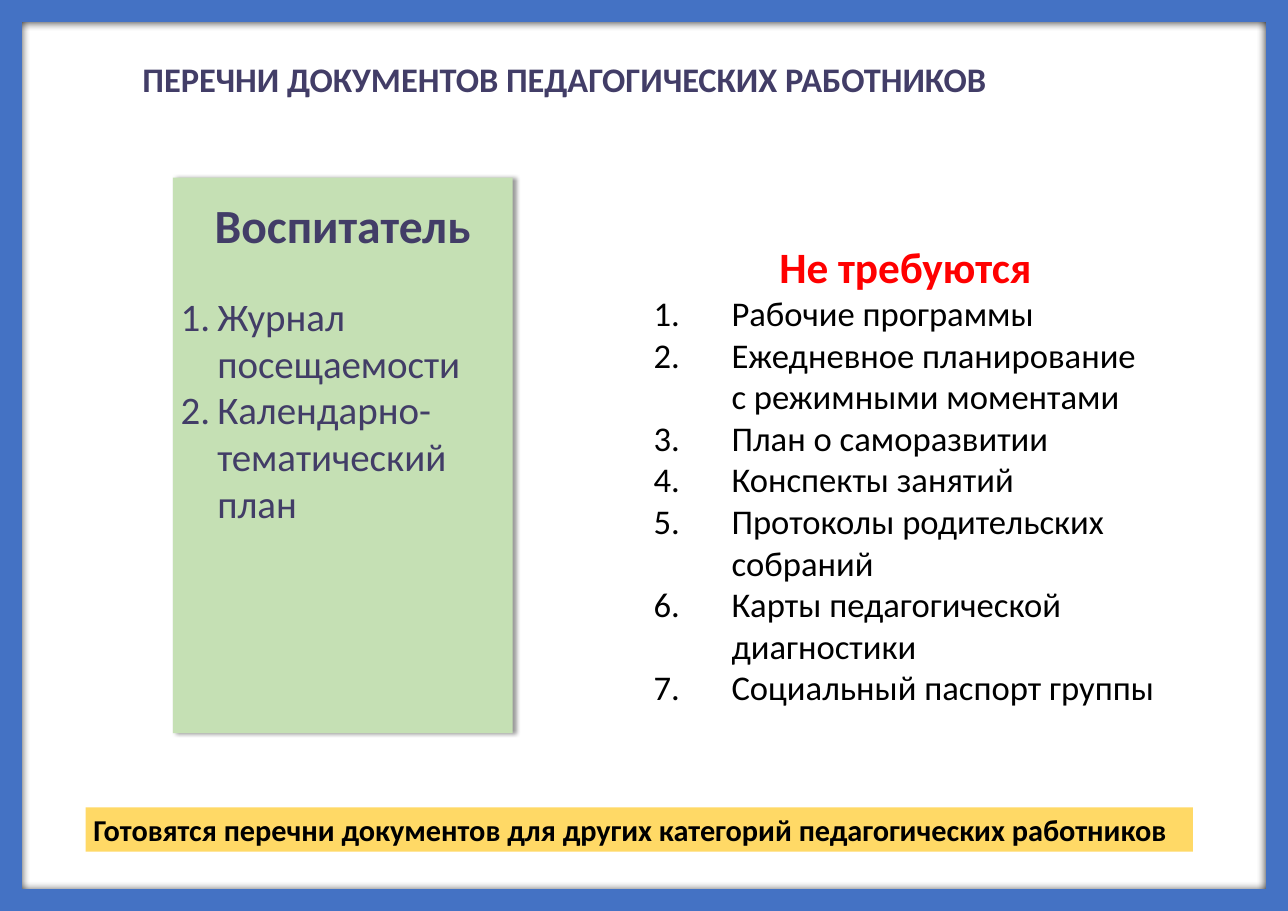
from pptx import Presentation
from pptx.dml.color import RGBColor
from pptx.enum.shapes import MSO_SHAPE
from pptx.enum.text import MSO_ANCHOR, PP_ALIGN
from pptx.oxml.ns import qn
from pptx.util import Pt
from lxml import etree

FRAME, RECT = MSO_SHAPE.FRAME, MSO_SHAPE.RECTANGLE
TOP = MSO_ANCHOR.TOP
LEFT, CENTER = PP_ALIGN.LEFT, PP_ALIGN.CENTER
PX = 9144  # 100 px to the inch
FONT = "Calibri"
COLORS = {
    "blue": "4472C4", "plum": "423D67", "red": "FF0000",
    "black": "000000", "green": "C5E0B4", "yellow": "FFD966",
}


class PageBuilder:
    def __init__(self, page):
        self.page = page

    def color(self, name):
        return RGBColor.from_string(COLORS[name])

    def shape(self, kind, place, fill):
        shape = self.page.shapes.add_shape(kind, *[n * PX for n in place])
        shape.shadow.inherit = False
        shape.fill.solid()
        shape.fill.fore_color.rgb = self.color(fill)
        shape.line.fill.background()
        return shape

    def text_box(self, place):
        return self.page.shapes.add_textbox(*[n * PX for n in place])

    def shadow(self, shape, blur, distance, angle, opacity):
        effects = shape._element.spPr.find(qn("a:effectLst"))
        outer = etree.SubElement(
            effects, qn("a:outerShdw"), blurRad=str(Pt(blur)), dist=str(Pt(distance)),
            dir=str(angle * 60000), algn="ctr", rotWithShape="0")
        tint = etree.SubElement(outer, qn("a:srgbClr"), val=COLORS["black"])
        etree.SubElement(tint, qn("a:alpha"), val=str(opacity * 1000))

    def prepare(self, box, inset_top=5):
        frame = box.text_frame
        frame.word_wrap = True
        frame.vertical_anchor = TOP
        frame.margin_top = inset_top * PX
        return frame

    def style(self, para, size, color, bold=False, align=LEFT):
        para.alignment = align
        for span in para.runs:
            span.font.name = FONT
            span.font.size = Pt(size)
            span.font.bold = bold
            span.font.color.rgb = self.color(color)

    def line(self, box, text, size, color):
        frame = self.prepare(box)
        frame.text = text
        self.style(frame.paragraphs[0], size, color, bold=True)

    def numbered_list(self, box, heading, heading_style, items, item_style,
                      indent, inset_top, gap=0):
        frame = self.prepare(box, inset_top)
        frame.text = heading
        self.style(frame.paragraphs[0], *heading_style, bold=True, align=CENTER)
        for index, item in enumerate(items):
            para = frame.add_paragraph()
            para.text = item
            if index == 0:
                para.space_before = Pt(gap)
            props = para._p.get_or_add_pPr()
            props.set("marL", str(indent * PX))
            props.set("indent", str(-indent * PX))
            etree.SubElement(props, qn("a:buFont"), typeface="+mj-lt")
            etree.SubElement(props, qn("a:buAutoNum"), type="arabicPeriod")
            self.style(para, *item_style)


def main():
    deck = Presentation()
    deck.slide_width, deck.slide_height = 1653 * PX, 1169 * PX
    builder = PageBuilder(deck.slides.add_slide(deck.slide_layouts[6]))

    # Border of the page
    border = builder.shape(FRAME, (0, 0, 1653, 1169), "blue")
    border.adjustments[0] = 0.024
    builder.shadow(border, blur=8.5, distance=1, angle=90, opacity=100)

    # Title
    title = builder.text_box((173, 69, 1175, 64))
    builder.line(title, "ПЕРЕЧНИ ДОКУМЕНТОВ ПЕДАГОГИЧЕСКИХ РАБОТНИКОВ", 31.8, "plum")

    # Documents that are not required
    not_required = builder.text_box((829, 228, 666, 688))
    builder.numbered_list(
        not_required, "Не требуются", (40, "red"),
        ["Рабочие программы",
         "Ежедневное планирование с режимными моментами",
         "План о саморазвитии",
         "Конспекты занятий",
         "Протоколы родительских собраний",
         "Карты педагогической диагностики",
         "Социальный паспорт группы"],
        (32, "black"), indent=100, inset_top=80)

    # Documents of the educator
    educator = builder.shape(RECT, (222, 228, 436, 713), "green")
    builder.shadow(educator, blur=4, distance=3, angle=0, opacity=40)
    builder.numbered_list(
        educator, "Воспитатель", (44, "plum"),
        ["Журнал посещаемости", "Календарно-тематический план"],
        (36, "plum"), indent=47, inset_top=24, gap=36)

    # Closing remark
    remark = builder.shape(RECT, (110, 1036, 1421, 57), "yellow")
    builder.line(
        remark,
        "Готовятся перечни документов для других категорий педагогических работников",
        28, "black")

    deck.save("out.pptx")


if __name__ == "__main__":
    main()
